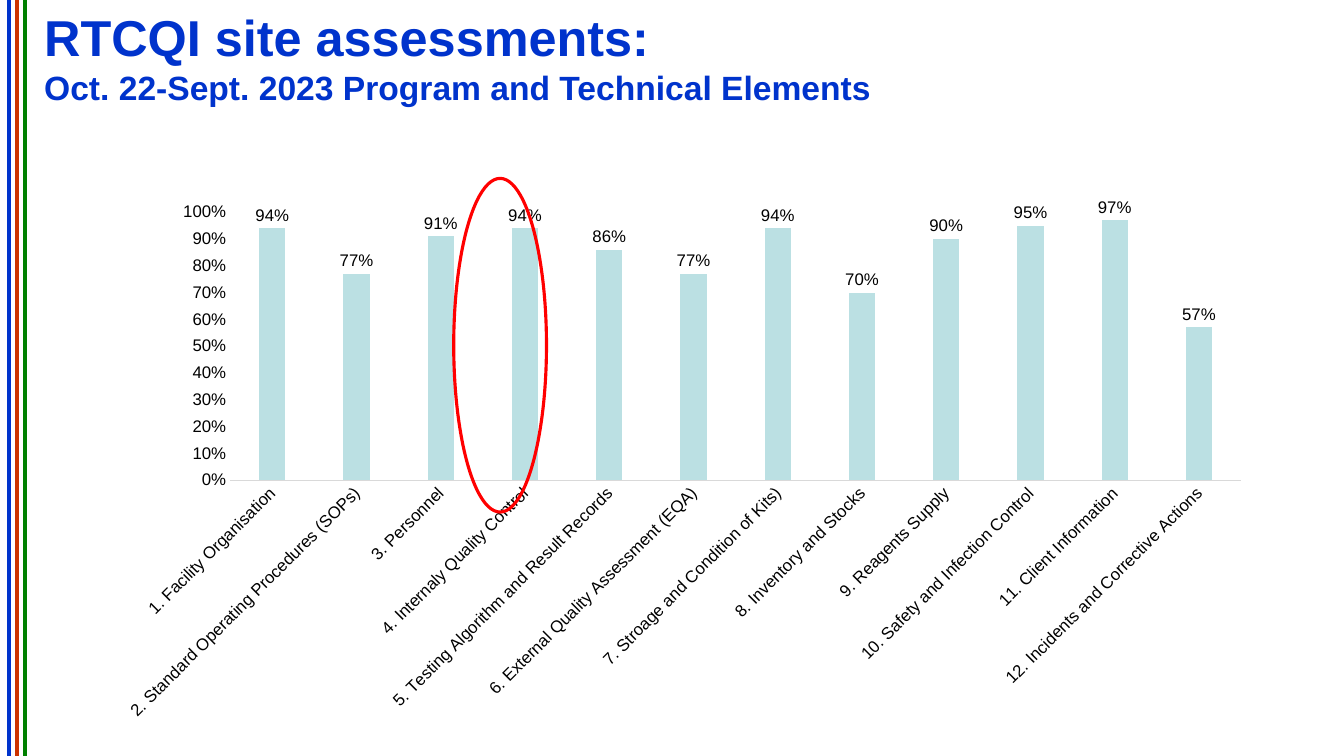
from lxml.etree import SubElement
from pptx import Presentation
from pptx.chart.data import CategoryChartData
from pptx.dml.color import RGBColor
from pptx.enum.chart import XL_CHART_TYPE as ChartType, XL_LABEL_POSITION as LabelPosition
from pptx.enum.chart import XL_TICK_MARK as TickMark
from pptx.enum.shapes import MSO_CONNECTOR as Connector, MSO_SHAPE as Shape
from pptx.enum.text import MSO_ANCHOR as Anchor
from pptx.oxml.ns import qn
from pptx.util import Inches, Pt

SCORES = {
    "1. Facility Organisation": 0.94,
    "2. Standard Operating Procedures (SOPs)": 0.77,
    "3. Personnel": 0.91,
    "4. Internaly Quality Control": 0.94,
    "5. Testing Algorithm and Result Records": 0.86,
    "6. External Quality Assessment (EQA)": 0.77,
    "7. Stroage and Condition of Kits)": 0.94,
    "8. Inventory and Stocks": 0.7,
    "9. Reagents Supply": 0.9,
    "10. Safety and Infection Control": 0.95,
    "11. Client Information": 0.97,
    "12. Incidents and Corrective Actions": 0.57,
}


def rgb(value):
    return RGBColor.from_string(value)


def apply(target, settings):
    for name, value in settings.items():
        setattr(target, name, value)


class AssessmentSlide:
    """Holds the style and current slide of the site assessment deck."""

    font_name = "Arial"
    blue = "0033CC"
    black = "000000"

    def __init__(self, deck):
        self.slide = deck.slides.add_slide(deck.slide_layouts[6])
        self.shapes = self.slide.shapes

    def style_font(self, font, size, color, bold=False):
        apply(font, {"name": self.font_name, "size": Pt(size), "bold": bold})
        font.color.rgb = rgb(color)

    def stripe(self, x, color):
        stripe = self.shapes.add_connector(
            Connector.STRAIGHT, Inches(x), 0, Inches(x), Inches(7.5))
        stripe.line.color.rgb = rgb(color)
        stripe.line.width = Pt(3)
        SubElement(stripe._element.spPr, qn("a:effectLst"))

    def heading(self, bounds, lines):
        frame = self.shapes.add_textbox(*map(Inches, bounds)).text_frame
        apply(frame, {"word_wrap": True, "vertical_anchor": Anchor.MIDDLE})
        paragraph = frame.paragraphs[0]
        for index, (text, size) in enumerate(lines):
            if index:
                paragraph.add_line_break()
            run = paragraph.add_run()
            run.text = text
            self.style_font(run.font, size, self.blue, bold=True)

    def score_chart(self, bounds, scores):
        data = CategoryChartData(number_format="0%")
        data.categories = list(scores)
        data.add_series("Series 1", list(scores.values()))
        chart = self.shapes.add_chart(
            ChartType.COLUMN_CLUSTERED, *map(Inches, bounds), data).chart
        apply(chart, {"has_legend": False, "has_title": False})
        self.style_font(chart.font, 10, self.black)

        elements, percent = chart.category_axis, chart.value_axis
        for axis in (elements, percent):
            apply(axis, {"major_tick_mark": TickMark.NONE,
                         "minor_tick_mark": TickMark.NONE,
                         "has_major_gridlines": False})
            self.style_font(axis.tick_labels.font, 12, self.black)
        elements.format.line.color.rgb = rgb("D9D9D9")
        elements.format.line.width = Pt(0.75)
        elements._element.txPr.find(qn("a:bodyPr")).set("rot", "-2700000")
        apply(percent, {"minimum_scale": 0, "maximum_scale": 1, "major_unit": 0.1})
        apply(percent.tick_labels, {"number_format": "0%",
                                    "number_format_is_linked": False})
        percent.format.line.fill.background()

        plot = chart.plots[0]
        apply(plot, {"gap_width": 219, "overlap": -27,
                     "vary_by_categories": False, "has_data_labels": True})
        apply(plot.data_labels, {"show_value": True, "number_format": "0%",
                                 "number_format_is_linked": False,
                                 "position": LabelPosition.OUTSIDE_END})
        self.style_font(plot.data_labels.font, 12, self.black)
        bars = plot.series[0].format.fill
        bars.solid()
        bars.fore_color.rgb = rgb("BBE0E3")

    def highlight(self, bounds):
        ring = self.shapes.add_shape(Shape.OVAL, *map(Inches, bounds))
        ring.shadow.inherit = False
        ring.fill.background()
        ring.line.color.rgb = rgb("FF0000")
        ring.line.width = Pt(2.25)


def main():
    deck = Presentation()
    apply(deck, {"slide_width": Inches(13.33), "slide_height": Inches(7.5)})
    page = AssessmentSlide(deck)
    for index, color in enumerate((page.blue, "CC3300", "008000")):
        page.stripe(0.09 + 0.08 * index, color)
    page.heading((0.34, -0.07, 11.9, 1.26), [
        ("RTCQI site assessments: ", 36),
        ("Oct. 22-Sept. 2023 Program and Technical Elements", 24),
    ])
    page.score_chart((1.02, 1.91, 11.52, 5.34), SCORES)
    page.highlight((4.5, 1.77, 0.92, 3.31))
    deck.save("out.pptx")


if __name__ == "__main__":
    main()
